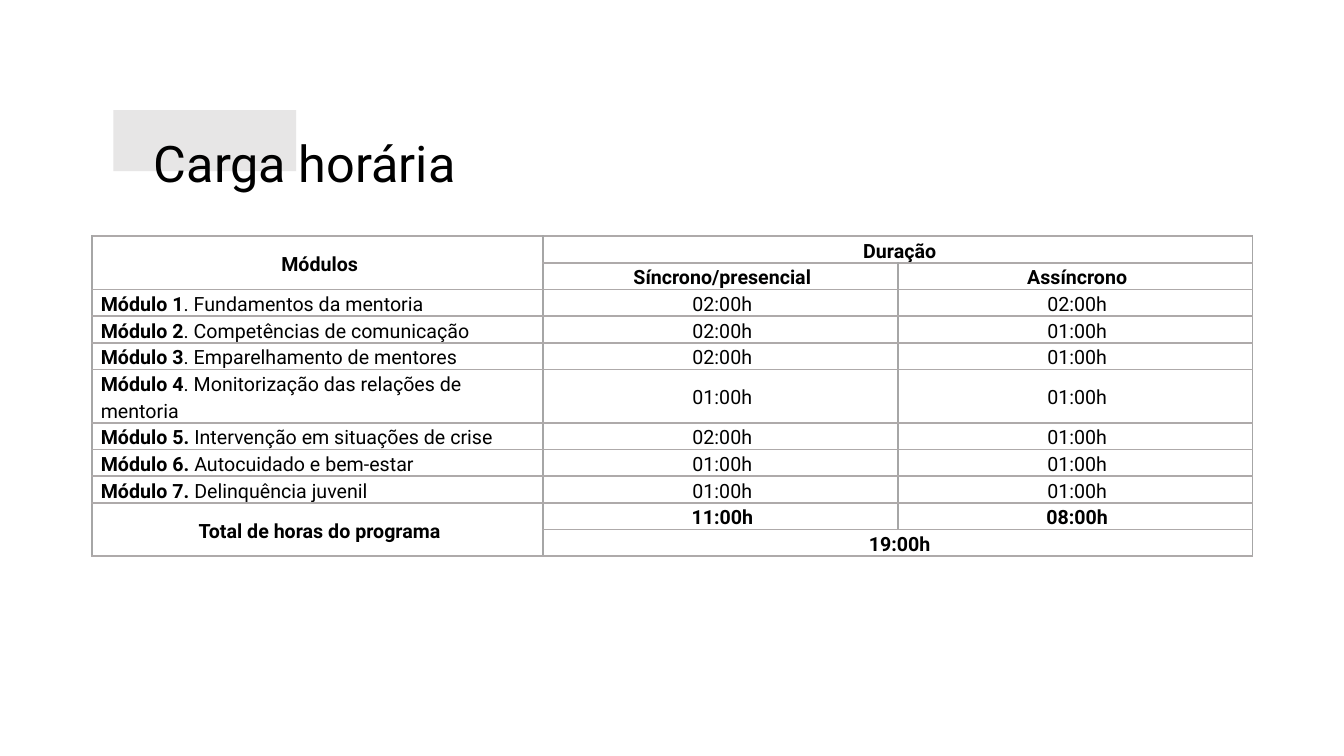
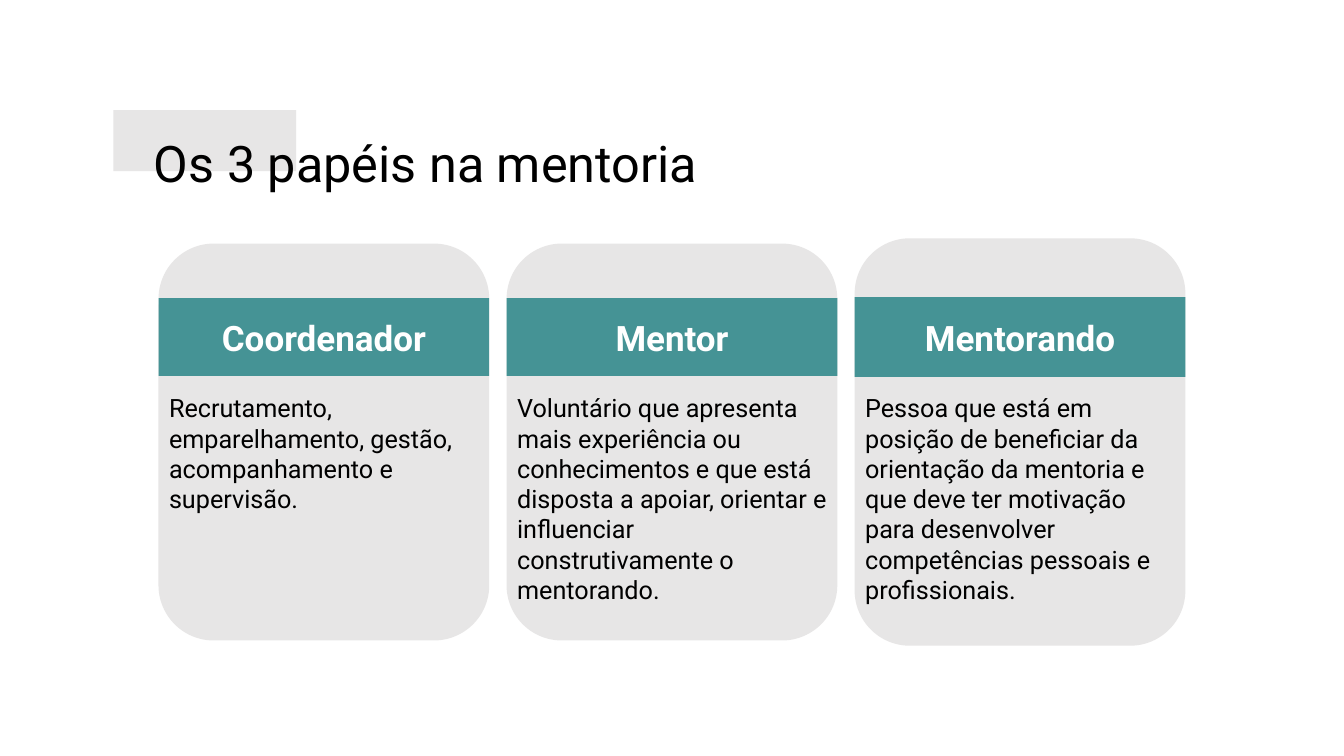
from lxml.etree import SubElement
from pptx import Presentation
from pptx.dml.color import RGBColor as Rgb
from pptx.enum.shapes import MSO_SHAPE as Kind
from pptx.enum.text import MSO_ANCHOR as Anchor, MSO_AUTO_SIZE as Auto, PP_ALIGN as Align
from pptx.oxml.ns import qn
from pptx.util import Pt

PX = 9525
FACE = "Roboto"
HUES = {"ink": "000000", "paper": "FFFFFF", "gray": "E7E6E6", "teal": "459395",
        "side": "A6A6A6", "rule": "AEAAAA"}
EDGES = {"lnL": "side", "lnR": "side", "lnT": "rule", "lnB": "rule"}

HEADS = [["Módulos", "Duração", ""], ["", "Síncrono/presencial", "Assíncrono"]]
UNITS = [
    ("Módulo 1", ". Fundamentos da mentoria", 2, 2),
    ("Módulo 2", ". Competências de comunicação", 2, 1),
    ("Módulo 3", ". Emparelhamento de mentores", 2, 1),
    ("Módulo 4", ". Monitorização das relações de mentoria", 1, 1),
    ("Módulo 5. ", "Intervenção em situações de crise", 2, 1),
    ("Módulo 6. ", "Autocuidado e bem-estar", 1, 1),
    ("Módulo 7. ", "Delinquência juvenil", 1, 1),
]
TOTALS = [["Total de horas do programa", "11:00h", "08:00h"], ["", "19:00h", ""]]
SPANS = [((0, 0), (1, 0)), ((0, 1), (0, 2)), ((9, 0), (10, 0)), ((10, 1), (10, 2))]

# name, text, extra height at each end
ROLES = [
    ("Coordenador", "Recrutamento, emparelhamento, gestão, acompanhamento e supervisão.", 0),
    ("Mentor", "Voluntário que apresenta mais experiência ou conhecimentos e que está "
     "disposta a apoiar, orientar e influenciar construtivamente o mentorando.", 0),
    ("Mentorando", "Pessoa que está em posição de beneficiar da orientação da mentoria e "
     "que deve ter motivação para desenvolver competências pessoais e profissionais.", 5),
]


def px(*vals):
    return [round(v * PX) for v in vals]


def apply(item, **vals):
    for key, val in vals.items():
        setattr(item, key, val)


def pad(frame, side):
    names = ("margin_left", "margin_top", "margin_right", "margin_bottom")
    apply(frame, **dict.fromkeys(names, side * PX))


def add_run(para, text, size, hue="ink", bold=False):
    run = para.add_run()
    run.text = text
    apply(run.font, name=FACE, size=Pt(size), bold=bold)
    run.font.color.rgb = Rgb.from_string(HUES[hue])


def add_block(slide, kind, box, hue):
    shape = slide.shapes.add_shape(kind, *px(*box))
    shape.shadow.inherit = False
    shape.fill.solid()
    shape.fill.fore_color.rgb = Rgb.from_string(HUES[hue])
    shape.line.fill.background()
    return shape


def add_page(deck, title):
    """Add a slide with its title over the gray block."""
    slide = deck.slides.add_slide(deck.slide_layouts[5])
    block = add_block(slide, Kind.RECTANGLE, (108, 105, 174, 58), "gray")
    head = slide.shapes.title
    head._element.addprevious(block._element)
    left, top, width, height = px(137, 106, 778, 83)
    apply(head, left=left, top=top, width=width, height=height)
    apply(head.text_frame, vertical_anchor=Anchor.BOTTOM, word_wrap=True,
          auto_size=Auto.NONE)
    para = head.text_frame.paragraphs[0]
    apply(para, alignment=Align.LEFT, line_spacing=0.9)
    add_run(para, title, 36)
    return slide


def edge_cell(cell):
    cell.fill.background()
    props = cell._tc.get_or_add_tcPr()
    for spot, (tag, hue) in enumerate(EDGES.items()):
        line = SubElement(props, qn("a:" + tag), w=str(Pt(1.5)))
        fill = SubElement(line, qn("a:solidFill"))
        SubElement(fill, qn("a:srgbClr"), val=HUES[hue])
        props.insert(spot, line)


def fill_cell(cell, parts, align):
    """Write (text, bold) parts into a bordered cell."""
    apply(cell, margin_left=4 * PX, margin_right=4 * PX, margin_top=0,
          margin_bottom=0, vertical_anchor=Anchor.MIDDLE)
    edge_cell(cell)
    para = cell.text_frame.paragraphs[0]
    apply(para, alignment=align, line_spacing=1.15, space_after=Pt(8))
    para._p.get_or_add_pPr().set("marL", str(4 * PX))
    for text, bold in parts:
        if text:
            add_run(para, text, 14, bold=bold)


def add_hours(slide, left, top, widths, high):
    rows = [[[(text, True)] for text in row] for row in HEADS]
    for name, topic, *hours in UNITS:
        rows.append([[(name, True), (topic, False)]]
                    + [[(f"{hour:02}:00h", False)] for hour in hours])
    rows += [[[(text, True)] for text in row] for row in TOTALS]
    box = px(left, top, sum(widths), high * len(rows))
    table = slide.shapes.add_table(len(rows), len(widths), *box).table
    apply(table, first_row=False, horz_banding=False)
    for col, width in zip(table.columns, widths):
        col.width = width * PX
    for y, row in enumerate(rows):
        for x, parts in enumerate(row):
            align = Align.LEFT if len(parts) > 1 else Align.CENTER
            fill_cell(table.cell(y, x), parts, align)
    for start, end in SPANS:
        table.cell(*start).merge(table.cell(*end))


def add_card(slide, box, name, text):
    left, top, width, height = box
    mid = top + height / 2
    back = add_block(slide, Kind.ROUNDED_RECTANGLE, box, "gray")
    back.adjustments[0] = 0.167

    thick = round(height * 0.196)
    band = add_block(slide, Kind.RECTANGLE,
                     (left, mid - 100 - thick / 2, width, thick), "teal")
    note = slide.shapes.add_textbox(*px(left + 3, mid - 54, width - 5, 220))
    for shape, words, anchor, align, style in (
            (band, name, Anchor.MIDDLE, Align.CENTER, (25, "paper", True)),
            (note, text, Anchor.TOP, Align.LEFT, (18,))):
        frame = shape.text_frame
        apply(frame, word_wrap=True, vertical_anchor=anchor)
        pad(frame, 7)
        frame.paragraphs[0].alignment = align
        add_run(frame.paragraphs[0], words, *style)


def add_roles(slide, left, top, width, height):
    wide = 315
    step = (width - wide) / (len(ROLES) - 1)
    for i, (name, text, grow) in enumerate(ROLES):
        box = (left + i * step, top - grow, wide, height + 2 * grow)
        add_card(slide, box, name, text)


def main():
    deck = Presentation()
    apply(deck, slide_width=1280 * PX, slide_height=720 * PX)
    add_hours(add_page(deck, "Carga horária"), 88, 225, (429, 338, 338), 25)
    add_roles(add_page(deck, "Os 3 papéis na mentoria"), 151, 232, 978, 378)
    deck.save("out.pptx")


if __name__ == "__main__":
    main()
